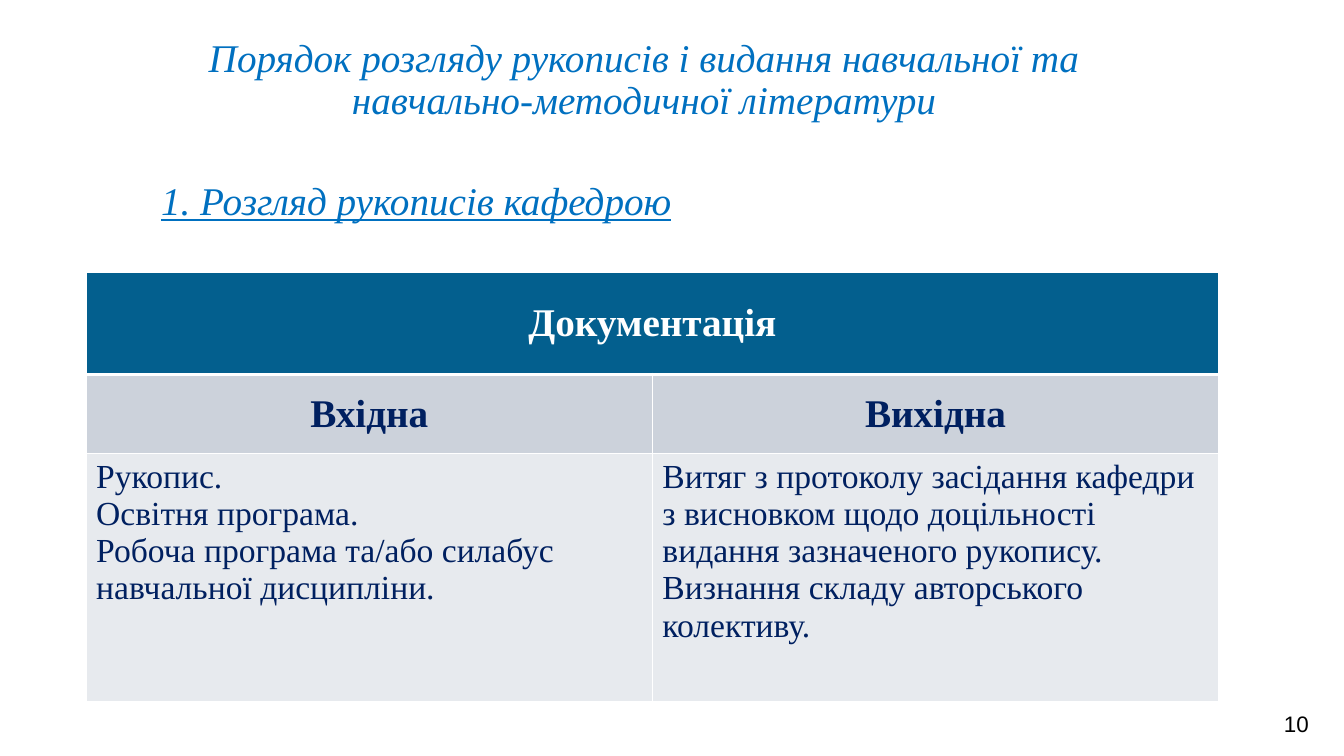
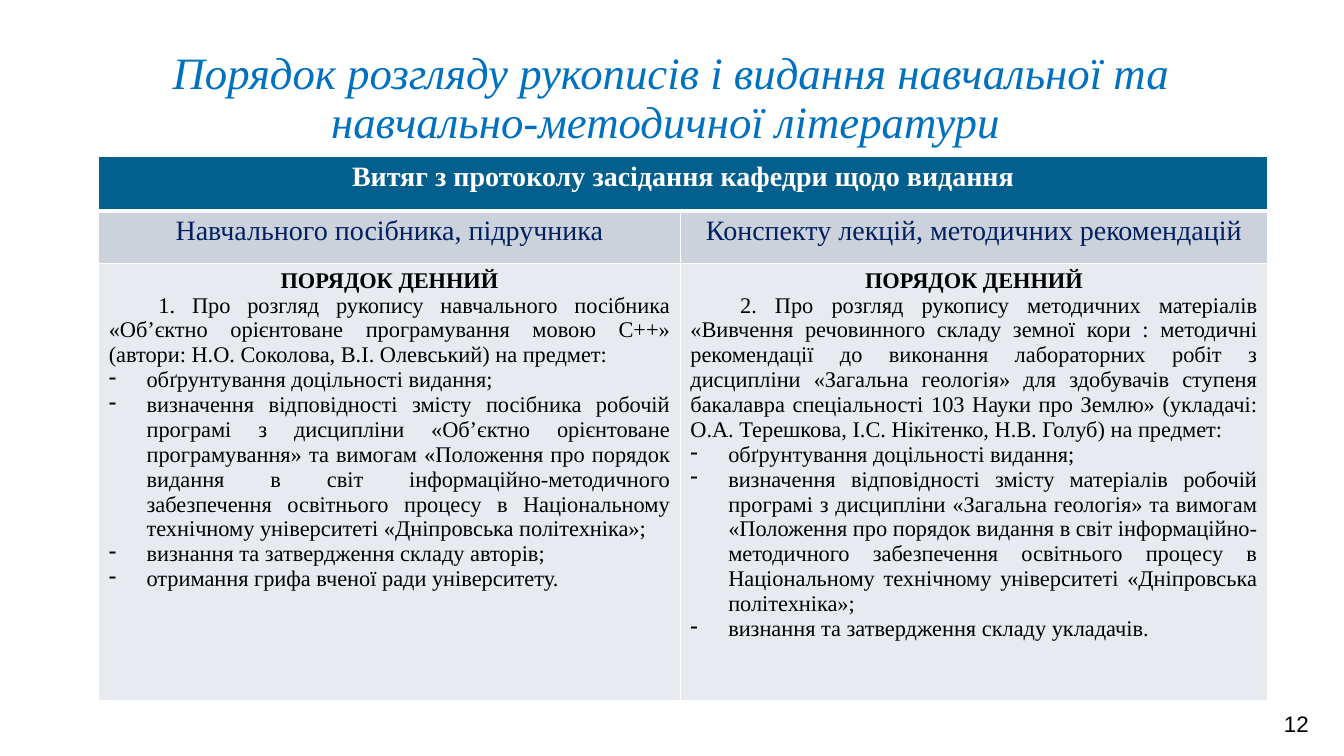
import pptx
import pptx.util
import pptx.dml.color
import pptx.enum.text
import pptx.oxml
import pptx.oxml.ns
import lxml.etree

Pt = pptx.util.Pt
RGBColor = pptx.dml.color.RGBColor
ALIGN = pptx.enum.text.PP_ALIGN
ANCHOR = pptx.enum.text.MSO_ANCHOR
qn = pptx.oxml.ns.qn

WHITE = RGBColor(0xFF, 0xFF, 0xFF)
BLACK = RGBColor(0x00, 0x00, 0x00)
TITLE_BLUE = RGBColor(0x00, 0x70, 0xC0)
HEADER_BLUE = RGBColor(0x03, 0x5F, 0x8E)
NAVY = RGBColor(0x00, 0x20, 0x60)
BAND_GREY = RGBColor(0xCC, 0xD2, 0xDB)
BODY_GREY = RGBColor(0xE7, 0xEA, 0xEE)
ROW_FILLS = [HEADER_BLUE, BAND_GREY, BODY_GREY]
SERIF = "Times New Roman"

STYLES = {
    "header": (28, True, WHITE, ALIGN.CENTER),
    "column": (28, True, NAVY, ALIGN.CENTER),
    "body": (24, False, NAVY, ALIGN.LEFT),
    "small header": (20, True, WHITE, ALIGN.CENTER),
    "small column": (20, False, NAVY, ALIGN.CENTER),
    "agenda": (16, True, BLACK, ALIGN.CENTER),
    "item": (16, False, BLACK, ALIGN.JUSTIFY),
    "dash": (16, False, BLACK, ALIGN.JUSTIFY),
}
INDENTS = {"item": (0, 35.5), "dash": (27, -27)}

SLIDES = [
    {
        "number": "10",
        "title": "Порядок розгляду рукописів і видання навчальної та \nнавчально-методичної літератури ",
        "title_size": 28,
        "title_box": (59, 24, 809, 151),
        "subtitle": "1. Розгляд рукописів кафедрою",
        "table_at": (61.5, 194.5),
        "columns": [404.5, 404.5],
        "rows": [73, 56.5, 177.5],
        "anchors": [ANCHOR.MIDDLE, ANCHOR.MIDDLE, ANCHOR.TOP],
        "cells": [
            [[("header", "Документація")]],
            [[("column", "Вхідна")], [("column", "Вихідна")]],
            [
                [
                    ("body", "Рукопис."),
                    ("body", "Освітня програма."),
                    ("body", "Робоча програма та/або силабус навчальної дисципліни."),
                ],
                [
                    ("body", "Витяг з протоколу засідання кафедри \nз висновком щодо доцільності видання зазначеного рукопису."),
                    ("body", "Визнання складу авторського колективу."),
                ],
            ],
        ],
    },
    {
        "number": "12",
        "title": "Порядок розгляду рукописів і видання навчальної та навчально-методичної літератури ",
        "title_size": 32,
        "title_box": (80, 33, 799, 89),
        "subtitle": None,
        "table_at": (70.5, 111.5),
        "columns": [415.5, 419.5],
        "rows": [39, 37.5, 312.5],
        "anchors": [ANCHOR.TOP] * 3,
        "cells": [
            [[("small header", "Витяг з протоколу засідання кафедри щодо видання")]],
            [
                [("small column", "Навчального посібника, підручника")],
                [("small column", "Конспекту лекцій, методичних рекомендацій")],
            ],
            [
                [
                    ("agenda", "ПОРЯДОК ДЕННИЙ"),
                    ("item", "1. Про розгляд рукопису навчального посібника «Об’єктно орієнтоване програмування мовою С++» (автори: Н.О. Соколова, В.І. Олевський) на предмет:"),
                    ("dash", "обґрунтування доцільності видання;"),
                    ("dash", "визначення відповідності змісту посібника робочій програмі з дисципліни «Об’єктно орієнтоване програмування» та вимогам «Положення про порядок видання в світ інформаційно-методичного забезпечення освітнього процесу в Національному технічному університеті «Дніпровська політехніка»;"),
                    ("dash", "визнання та затвердження складу авторів;"),
                    ("dash", "отримання грифа вченої ради університету."),
                ],
                [
                    ("agenda", "ПОРЯДОК ДЕННИЙ"),
                    ("item", "2. Про розгляд рукопису методичних матеріалів «Вивчення речовинного складу земної кори : методичні рекомендації до виконання лабораторних робіт з дисципліни «Загальна геологія» для здобувачів ступеня бакалавра спеціальності 103 Науки про Землю» (укладачі: О.А. Терешкова, І.С. Нікітенко, Н.В. Голуб) на предмет:"),
                    ("dash", "обґрунтування доцільності видання;"),
                    ("dash", "визначення відповідності змісту матеріалів робочій програмі з дисципліни «Загальна геологія» та вимогам «Положення про порядок видання в світ інформаційно-методичного забезпечення освітнього процесу в Національному технічному університеті «Дніпровська політехніка»;"),
                    ("dash", "визнання та затвердження складу укладачів."),
                ],
            ],
        ],
    },
]


def write(paragraph, text, size, color, align, bold=False, font_name=SERIF):
    paragraph.text = text
    paragraph.alignment = align
    paragraph.font.name = font_name
    paragraph.font.size = Pt(size)
    paragraph.font.bold = bold
    paragraph.font.color.rgb = color


def add_borders(cell, top, bottom):
    properties = cell._tc.get_or_add_tcPr()
    for side, width in (("L", 1), ("R", 1), ("T", top), ("B", bottom)):
        line = lxml.etree.SubElement(properties, qn("a:ln" + side), w=str(Pt(width)))
        fill = lxml.etree.SubElement(line, qn("a:solidFill"))
        lxml.etree.SubElement(fill, qn("a:srgbClr"), val=str(WHITE))


presentation = pptx.Presentation()
presentation.slide_width = Pt(960)
presentation.slide_height = Pt(540)

for content in SLIDES:
    slide = presentation.slides.add_slide(presentation.slide_layouts[6])

    number_box = slide.shapes.add_textbox(Pt(903), Pt(503.5), Pt(46), Pt(26.5))
    number_box.text_frame.word_wrap = True
    write(number_box.text_frame.paragraphs[0], content["number"], 16, BLACK, ALIGN.CENTER, font_name="Arial")

    title_box = slide.shapes.add_textbox(*map(Pt, content["title_box"]))
    title_frame = title_box.text_frame
    title_frame.word_wrap = True
    title = title_frame.paragraphs[0]
    write(title, content["title"], content["title_size"], TITLE_BLUE, ALIGN.CENTER)
    if content["subtitle"]:
        subtitle = title_frame.add_paragraph()
        write(subtitle, content["subtitle"], 28, TITLE_BLUE, ALIGN.LEFT)
        subtitle._p.get_or_add_pPr().set("indent", str(Pt(49)))
        subtitle.space_before = Pt(42)
        subtitle.font.underline = True
    for paragraph in title_frame.paragraphs:
        paragraph.line_spacing = 0.9
        paragraph.font.italic = True

    columns, rows = content["columns"], content["rows"]
    left, top = content["table_at"]
    table = slide.shapes.add_table(
        len(rows), len(columns), Pt(left), Pt(top), Pt(sum(columns)), Pt(sum(rows))
    ).table
    for column, width in zip(table.columns, columns):
        column.width = Pt(width)
    for row_index, height in enumerate(rows):
        table.rows[row_index].height = Pt(height)
        for cell in table.rows[row_index].cells:
            add_borders(cell, 3 if row_index == 1 else 1, 3 if row_index == 0 else 1)
            cell.fill.solid()
            cell.fill.fore_color.rgb = ROW_FILLS[row_index]
            cell.vertical_anchor = content["anchors"][row_index]
    table.cell(0, 0).merge(table.cell(0, 1))

    for row_index, row_cells in enumerate(content["cells"]):
        for column_index, lines in enumerate(row_cells):
            frame = table.cell(row_index, column_index).text_frame
            for line_index, (kind, text) in enumerate(lines):
                paragraph = frame.add_paragraph() if line_index else frame.paragraphs[0]
                properties = paragraph._p.get_or_add_pPr()
                if kind in INDENTS:
                    margin, indent = INDENTS[kind]
                    properties.set("marL", str(Pt(margin)))
                    properties.set("indent", str(Pt(indent)))
                if kind == "dash":
                    lxml.etree.SubElement(properties, qn("a:buChar"), char="-")
                size, bold, color, align = STYLES[kind]
                write(paragraph, text, size, color, align, bold)

presentation.save("out.pptx")
